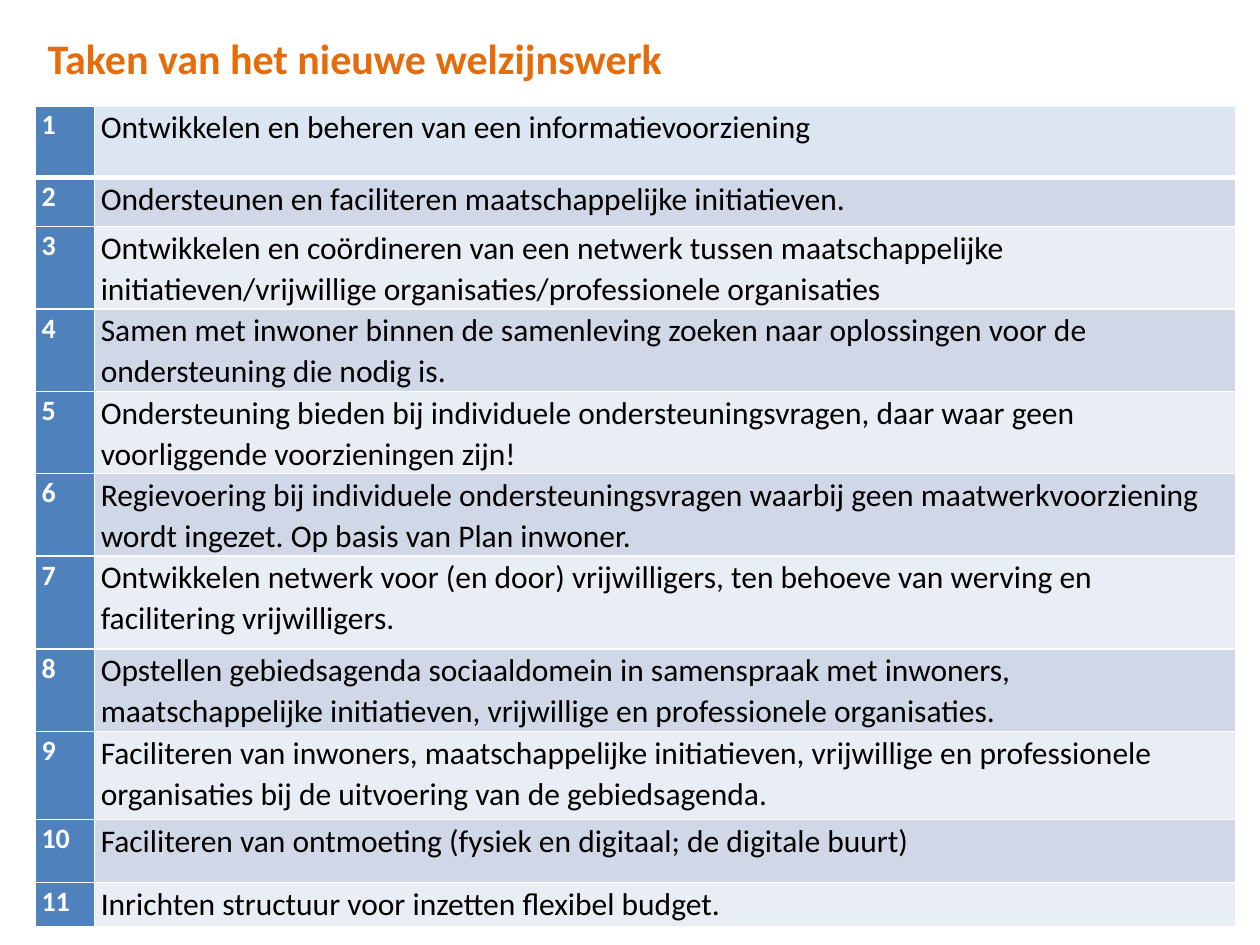
"""Build a slide with a numbered table of the tasks of the new welfare work."""
from lxml import etree
from pptx import Presentation
from pptx.dml.color import RGBColor
from pptx.oxml.ns import qn
from pptx.util import Inches, Pt

FONT = "Calibri"
COLORS = {"title": "E46C0A", "number": "4F81BD", "first": "DCE6F2",
          "even": "D0D8E8", "odd": "E9EDF4", "white": "FFFFFF", "black": "000000"}
TITLE = "Taken van het nieuwe welzijnswerk"
TASKS = [
    ("Ontwikkelen en beheren van een informatievoorziening", 0.57),
    ("Ondersteunen en faciliteren maatschappelijke initiatieven.", 0.39),
    ("Ontwikkelen en coördineren van een netwerk tussen maatschappelijke "
     "initiatieven/vrijwillige organisaties/professionele organisaties", 0.65),
    ("Samen met inwoner binnen de samenleving zoeken naar oplossingen voor de "
     "ondersteuning die nodig is.", 0.62),
    ("Ondersteuning bieden bij individuele ondersteuningsvragen, daar waar geen "
     "voorliggende voorzieningen zijn!", 0.59),
    ("Regievoering bij individuele ondersteuningsvragen waarbij geen "
     "maatwerkvoorziening wordt ingezet. Op basis van Plan inwoner.", 0.65),
    ("Ontwikkelen netwerk voor (en door) vrijwilligers, ten behoeve van werving en "
     "facilitering vrijwilligers.", 0.74),
    ("Opstellen gebiedsagenda sociaaldomein in samenspraak met inwoners, "
     "maatschappelijke initiatieven, vrijwillige en professionele organisaties.", 0.65),
    ("Faciliteren van inwoners, maatschappelijke initiatieven, vrijwillige en "
     "professionele organisaties bij de uitvoering van de gebiedsagenda.", 0.7),
    ("Faciliteren van ontmoeting (fysiek en digitaal; de digitale buurt)", 0.5),
    ("Inrichten structuur voor inzetten flexibel budget.", 0.35),
]
LEFT, TOP, HEIGHT = 0.28, 0.84, 6.77
COLUMNS = (0.47, 9.06)


def add_run(p, text, size, color, bold):
    r = p.add_run()
    r.text = text
    r.font.name, r.font.size, r.font.bold = FONT, Pt(size), bold
    r.font.color.rgb = RGBColor.from_string(COLORS[color])


def set_borders(cell, widths):
    tcPr = cell._tc.get_or_add_tcPr()
    for side, width in widths.items():
        ln = etree.SubElement(tcPr, qn(f"a:ln{side}"), w=str(Pt(width)))
        fill = etree.SubElement(ln, qn("a:solidFill"))
        etree.SubElement(fill, qn("a:srgbClr"), val=COLORS["white"])


def fill_cell(cell, text, size, color, bold, fill, borders):
    cell.margin_left = cell.margin_right = Inches(0.05)
    cell.margin_top = cell.margin_bottom = 0
    set_borders(cell, borders)
    cell.fill.solid()
    cell.fill.fore_color.rgb = RGBColor.from_string(COLORS[fill])
    p = cell.text_frame.paragraphs[0]
    p.line_spacing = 1.07
    add_run(p, text, size, color, bold)


def add_tasks(slide):
    s = slide.shapes.add_table(len(TASKS), len(COLUMNS), Inches(LEFT), Inches(TOP),
                               Inches(sum(COLUMNS)), Inches(HEIGHT))
    table = s.table
    for column, width in zip(table.columns, COLUMNS):
        column.width = Inches(width)
    for i, (task, height) in enumerate(TASKS):
        table.rows[i].height = Inches(height)
        band = "first" if i == 0 else ("odd", "even")[i % 2]
        borders = {"L": 1, "R": 1, "T": 3 if i == 1 else 1, "B": 3 if i == 0 else 1}
        fill_cell(table.cell(i, 0), str(i + 1), 16, "white", True, "number", borders)
        fill_cell(table.cell(i, 1), task, 18, "black", False, band, borders)
    s.height = Inches(HEIGHT)


def add_title(slide):
    tf = slide.shapes.add_textbox(Inches(LEFT), Inches(0.21), Inches(5.43), Inches(0.5)).text_frame
    tf.word_wrap = True
    add_run(tf.paragraphs[0], TITLE, 24, "title", True)


def main():
    prs = Presentation()
    prs.slide_width, prs.slide_height = Inches(10), Inches(7.5)
    slide = prs.slides.add_slide(prs.slide_layouts[6])
    add_tasks(slide)
    add_title(slide)
    prs.save("out.pptx")


if __name__ == "__main__":
    main()
